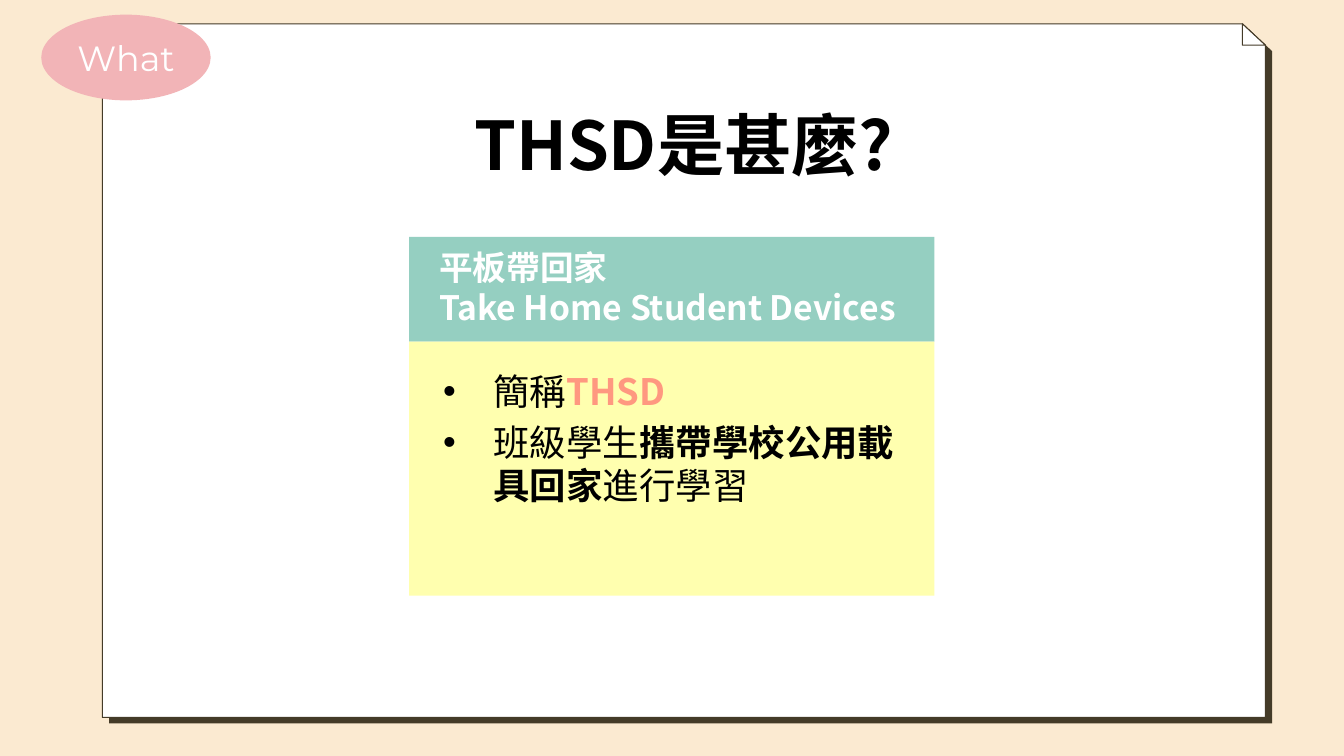
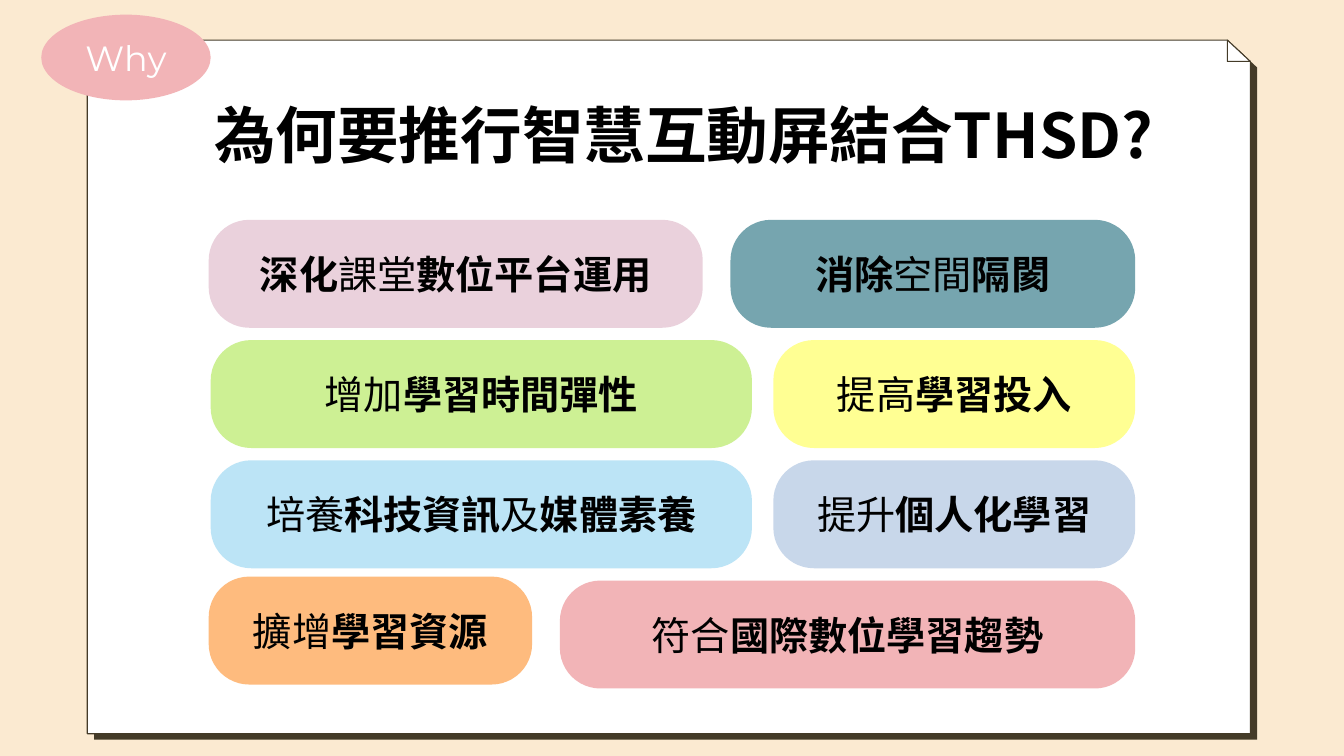
import pptx
import pptx.dml.color
import pptx.enum.shapes
import pptx.enum.text
import pptx.oxml.ns
import pptx.util
from dataclasses import dataclass
from lxml import etree

Cm = pptx.util.Cm
SHAPES = pptx.enum.shapes.MSO_SHAPE
ALIGN = pptx.enum.text.PP_ALIGN
ANCHOR = pptx.enum.text.MSO_ANCHOR
qn = pptx.oxml.ns.qn


@dataclass(frozen=True)
class Theme:
    background: str = "FBEAD1"
    paper: str = "FFFFFF"
    outline: str = "443B28"
    badge: str = "F2B4B7"
    header: str = "95CFC1"
    panel: str = "FFFFAF"
    accent: str = "FF9880"
    dark: str = "000000"
    light: str = "FFFFFF"
    font: str = "Noto Sans CJK TC"
    badge_font: str = "Montserrat"
    badge_size: int = 25
    header_size: int = 24
    body_size: int = 26
    card_size: int = 28


THEME = Theme()

WHAT = {
    "badge": "What",
    "title": "THSD是甚麼?",
    "title_size": 48,
    "title_top": 1.7,
    "paper": (2.58, 0.6),
}
DEFINITION_HEADER = [
    [("平板帶回家", True)],
    [("Take Home Student Devices", True)],
]
DEFINITION_POINTS = [
    [("簡稱", False), ("THSD", True, THEME.accent)],
    [("班級學生", False), ("攜帶學校公用載具回家", True), ("進行學習", False)],
]

WHY = {
    "badge": "Why",
    "title": "為何要推行智慧互動屏結合THSD?",
    "title_size": 44,
    "title_top": 1.45,
    "paper": (2.2, 1.01),
}
# left, width, lift, fill, runs
REASON_ROWS = [
    [
        (5.26, 12.45, 0, "EAD1DC", [("深化", True), ("課堂", False), ("數位平台運用", True)]),
        (18.41, 10.2, 0, "76A5AF", [("消除", True), ("空間", False), ("隔閡", True)]),
    ],
    [
        (5.31, 13.64, 0, "CDF094", [("增加", False), ("學習時間彈性", True)]),
        (19.49, 9.12, 0, "FFFF93", [("提高", False), ("學習投入", True)]),
    ],
    [
        (5.31, 13.64, 0, "BCE4F6",
         [("培養", False), ("科技資訊", True), ("及", False), ("媒體素養", True)]),
        (19.49, 9.12, 0, "C8D7EA", [("提升", False), ("個人化學習", True)]),
    ],
    [
        (5.26, 8.15, 0.1, "FEBB7E", [("擴增", False), ("學習資源", True)]),
        (14.11, 14.5, 0, "F2B4B7", [("符合", False), ("國際數位學習趨勢", True)]),
    ],
]


def rgb(value):
    return pptx.dml.color.RGBColor.from_string(value)


def paint(shape, fill, line=None):
    shape.shadow.inherit = False
    shape.fill.solid()
    shape.fill.fore_color.rgb = rgb(fill)
    if line:
        shape.line.color.rgb = rgb(line)
        shape.line.width = pptx.util.Pt(0.75)
    else:
        shape.line.fill.background()


def add_block(slide, kind, box, fill):
    shape = slide.shapes.add_shape(kind, *map(Cm, box))
    paint(shape, fill)
    return shape


def add_bullet(paragraph, color):
    properties = paragraph._p.get_or_add_pPr()
    properties.set("marL", str(Cm(1.27)))
    properties.set("indent", str(-Cm(1.27)))
    bullet_color = etree.SubElement(properties, qn("a:buClr"))
    etree.SubElement(bullet_color, qn("a:srgbClr"), val=color)
    etree.SubElement(properties, qn("a:buFont"), typeface="Arial")
    etree.SubElement(properties, qn("a:buChar"), char="•")


def write(shape, paragraphs, size, color, font=THEME.font, align=ALIGN.CENTER,
          anchor=ANCHOR.MIDDLE, margins=(0, 0, 0, 0), bullets=False, gap=0):
    frame = shape.text_frame
    frame.word_wrap = True
    frame.vertical_anchor = anchor
    (frame.margin_left, frame.margin_top,
     frame.margin_right, frame.margin_bottom) = map(Cm, margins)
    for index, runs in enumerate(paragraphs):
        paragraph = frame.add_paragraph() if index else frame.paragraphs[0]
        paragraph.alignment = align
        if bullets:
            add_bullet(paragraph, color)
        if index and gap:
            paragraph.space_before = pptx.util.Pt(gap)
        paragraph.font.name = font
        paragraph.font.size = pptx.util.Pt(size)
        paragraph.font.color.rgb = rgb(color)
        defaults = paragraph._p.pPr.find(qn("a:defRPr"))
        etree.SubElement(defaults, qn("a:ea"), typeface=font)
        for text, bold, *accent in runs:
            run = paragraph.add_run()
            run.text = text
            run.font.bold = bold
            if accent:
                run.font.color.rgb = rgb(accent[0])


def add_outline(slide, points, fill, line=None):
    start, *rest = [(Cm(x), Cm(y)) for x, y in points]
    builder = slide.shapes.build_freeform(*start)
    builder.add_line_segments(rest, close=True)
    paint(builder.convert_to_shape(), fill, line)


def add_paper(slide, left, top):
    right, bottom = left + 29.31, top + 17.48
    fold_left, fold_bottom = right - 0.58, top + 0.54
    sheet = [(left, top), (fold_left, top), (right, fold_bottom),
             (right, bottom), (left, bottom)]
    fold = [(fold_left, top), (right, fold_bottom), (fold_left, fold_bottom)]
    add_outline(slide, [(x + 0.17, y + 0.15) for x, y in sheet], THEME.outline)
    add_outline(slide, sheet, THEME.paper, THEME.outline)
    add_outline(slide, fold, THEME.paper, THEME.outline)


def add_page(presentation, page):
    slide = presentation.slides.add_slide(presentation.slide_layouts[6])
    slide.background.fill.solid()
    slide.background.fill.fore_color.rgb = rgb(THEME.background)
    add_paper(slide, *page["paper"])
    title = slide.shapes.add_textbox(*map(Cm, (3.78, page["title_top"], 26.9, 3.84)))
    write(title, [[(page["title"], True)]], page["title_size"], THEME.dark)
    badge = add_block(slide, SHAPES.OVAL, (1.04, 0.37, 4.27, 2.16), THEME.badge)
    write(badge, [[(page["badge"], False)]], THEME.badge_size, THEME.light, THEME.badge_font)
    return slide


def add_definition(slide):
    left, top, width, header_height, panel_height = 10.31, 5.97, 13.24, 2.64, 6.4
    header = add_block(slide, SHAPES.RECTANGLE, (left, top, width, header_height), THEME.header)
    write(header, DEFINITION_HEADER, THEME.header_size, THEME.light, align=ALIGN.LEFT,
          anchor=ANCHOR.TOP, margins=(0.76, 0.25, 0.25, 0))
    panel = add_block(slide, SHAPES.RECTANGLE,
                      (left, top + header_height, width, panel_height), THEME.panel)
    write(panel, DEFINITION_POINTS, THEME.body_size, THEME.dark, align=ALIGN.LEFT,
          anchor=ANCHOR.TOP, margins=(0.86, 0.69, 0.86, 0), bullets=True, gap=5.2)


def add_reasons(slide):
    first_top, pitch, height = 5.54, 3.03, 2.72
    for row, cards in enumerate(REASON_ROWS):
        for left, width, lift, fill, runs in cards:
            top = first_top + row * pitch - lift
            card = add_block(slide, SHAPES.ROUNDED_RECTANGLE, (left, top, width, height), fill)
            card.adjustments[0] = 0.375
            write(card, [runs], THEME.card_size, THEME.dark)


def main():
    presentation = pptx.Presentation()
    presentation.slide_width = Cm(33.87)
    presentation.slide_height = Cm(19.05)
    add_definition(add_page(presentation, WHAT))
    add_reasons(add_page(presentation, WHY))
    presentation.save("out.pptx")


if __name__ == "__main__":
    main()
